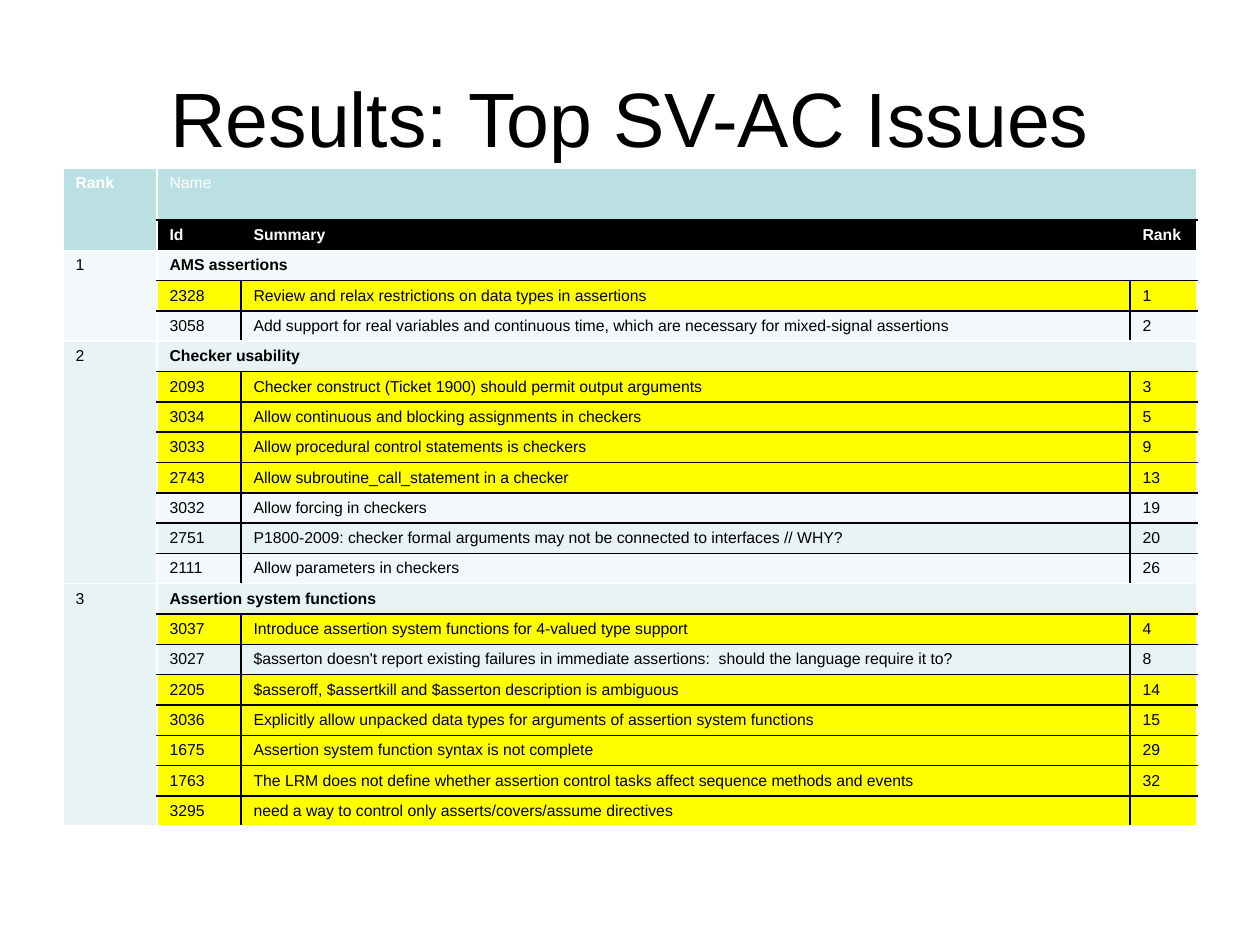
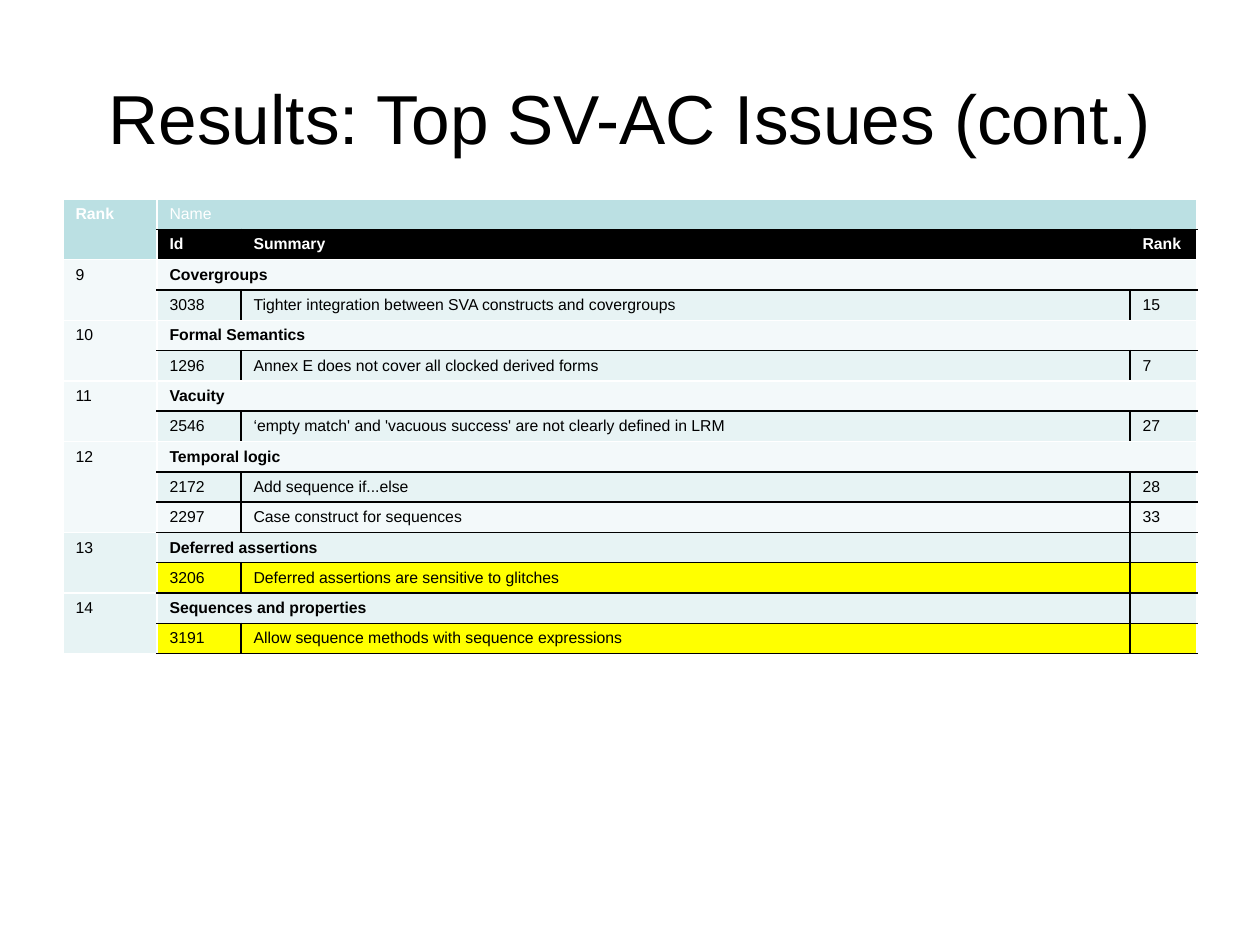
from dataclasses import dataclass

from lxml.etree import SubElement
from pptx import Presentation
from pptx.dml.color import RGBColor
from pptx.enum.text import MSO_ANCHOR, MSO_AUTO_SIZE, PP_ALIGN
from pptx.oxml.ns import qn
from pptx.util import Pt

HEAD = ("Rank", "Name", [("Id", "Summary", "Rank")])

SLIDES = [
    {
        "title": "Results: Top SV-AC Issues", "size": 44, "top": 168, "first": 52,
        "groups": [
            ("1", "AMS assertions", [
                ("2328", "Review and relax restrictions on data types in assertions", "1"),
                ("3058", "Add support for real variables and continuous time, which are necessary for mixed-signal assertions", "2"),
            ]),
            ("2", "Checker usability", [
                ("2093", "Checker construct (Ticket 1900) should permit output arguments", "3"),
                ("3034", "Allow continuous and blocking assignments in checkers", "5"),
                ("3033", "Allow procedural control statements is checkers", "9"),
                ("2743", "Allow subroutine_call_statement in a checker", "13"),
                ("3032", "Allow forcing in checkers", "19"),
                ("2751", "P1800-2009: checker formal arguments may not be connected to interfaces // WHY?", "20"),
                ("2111", "Allow parameters in checkers", "26"),
            ]),
            ("3", "Assertion system functions", [
                ("3037", "Introduce assertion system functions for 4-valued type support", "4"),
                ("3027", "$asserton doesn't report existing failures in immediate assertions:  should the language require it to?", "8"),
                ("2205", "$asseroff, $assertkill and $asserton description is ambiguous", "14"),
                ("3036", "Explicitly allow unpacked data types for arguments of assertion system functions", "15"),
                ("1675", "Assertion system function syntax is not complete", "29"),
                ("1763", "The LRM does not define whether assertion control tasks affect sequence methods and events", "32"),
                ("3295", "need a way to control only asserts/covers/assume directives", ""),
            ]),
        ],
    },
    {
        "title": "Results: Top SV-AC Issues (cont.)", "size": 39.6, "top": 199, "first": 30,
        "groups": [
            ("9", "Covergroups", [
                ("3038", "Tighter integration between SVA constructs and covergroups", "15"),
            ]),
            ("10", "Formal Semantics", [
                ("1296", "Annex E does not cover all clocked derived forms", "7"),
            ]),
            ("11", "Vacuity", [
                ("2546", "‘empty match' and 'vacuous success' are not clearly defined in LRM", "27"),
            ]),
            ("12", "Temporal logic", [
                ("2172", "Add sequence if...else", "28"),
                ("2297", "Case construct for sequences", "33"),
            ]),
            ("13", "Deferred assertions", [
                ("3206", "Deferred assertions are sensitive to glitches", ""),
            ]),
            ("14", "Sequences and properties", [
                ("3191", "Allow sequence methods with sequence expressions", ""),
            ]),
        ],
    },
]

HOT = {"2328", "2093", "3034", "3033", "2743", "3037", "2205", "3036",
       "1675", "1763", "3295", "3206", "3191"}
SPLIT = {"13", "14"}

LEFT, WIDTH, ROW = 63, 1134, 30
COLS = (94, 84, 889, 67)
TITLE = (LEFT, 38, WIDTH, 158)


@dataclass(frozen=True)
class Theme:
    font: str = "Arial"
    text: float = 9
    line: float = 1
    black: str = "000000"
    white: str = "FFFFFF"
    head: str = "BBE0E3"
    bands: tuple = ("F3F9FA", "E7F3F4")
    hot: str = "FFFF00"


LOOK = Theme()
B, W = LOOK.black, LOOK.white


def px(n):
    return round(n * 914400 / 126)


def style(par, size, color, bold=False):
    for run in par.runs:
        run.font.name = LOOK.font
        run.font.size = Pt(size)
        run.font.bold = bold
        run.font.color.rgb = RGBColor.from_string(color)


def edge(cell, colors):
    props = cell._tc.get_or_add_tcPr()
    for side, color in zip("LRTB", colors):
        line = SubElement(props, qn(f"a:ln{side}"), w=str(Pt(LOOK.line)))
        fill = SubElement(line, qn("a:solidFill"))
        SubElement(fill, qn("a:srgbClr"), val=color)


def paint(cell, text, fill, edges, color=B, bold=False):
    edge(cell, edges)
    cell.fill.solid()
    cell.fill.fore_color.rgb = RGBColor.from_string(fill)
    par = cell.text_frame.paragraphs[0]
    par.text = text
    style(par, LOOK.text, color, bold)
    if not text:
        mark = SubElement(par._p, qn("a:endParaRPr"), sz=str(Pt(LOOK.text).centipoints))
        SubElement(mark, qn("a:latin"), typeface=LOOK.font)


def block(grid, top, group, after):
    rank, name, items = group
    head, split = group is HEAD, rank in SPLIT
    ink = W if head else B
    band = LOOK.head if head else LOOK.bands[top % 2]
    last = top + len(items)
    end = B if split or after in SPLIT else W
    grid.cell(top, 0).merge(grid.cell(last, 0))
    grid.cell(top, 1).merge(grid.cell(top, 2 if split else 3))

    for row in range(top, last + 1):
        paint(grid.cell(row, 0), rank if row == top else "", band, (W, W, W, W), ink, head)

    lid = B if split else W
    for col, text in enumerate((name, "", ""), 1):
        left = B if split and col == 3 else W
        right = B if split and col < 3 else W
        paint(grid.cell(top, col), text, band, (left, right, lid, B), ink, not head)

    for row, item in enumerate(items, top + 1):
        fill = B if head else LOOK.hot if item[0] in HOT else LOOK.bands[row % 2]
        base = end if row == last else B
        for col, text in enumerate(item, 1):
            sides = (W if col == 1 else B, W if col == 3 else B, B, base)
            paint(grid.cell(row, col), text, fill, sides, ink, head)
    return last + 1


def table(slide, data):
    groups = [HEAD, *data["groups"]]
    count = sum(1 + len(items) for _, _, items in groups)
    tall = data["first"] + ROW * (count - 1)
    grid = slide.shapes.add_table(
        count, len(COLS), px(LEFT), px(data["top"]), px(WIDTH), px(tall)).table
    grid.first_row = grid.horz_banding = False
    for col, wide in zip(grid.columns, COLS):
        col.width = px(wide)
    for row in grid.rows:
        row.height = px(ROW)
    grid.rows[0].height = px(data["first"])
    ranks = [group[0] for group in groups[1:]] + [""]
    top = 0
    for group, after in zip(groups, ranks):
        top = block(grid, top, group, after)


def head(slide, data):
    box = slide.shapes.title
    box.left, box.top, box.width, box.height = map(px, TITLE)
    frame = box.text_frame
    frame.text = data["title"]
    frame.word_wrap = True
    frame.auto_size = MSO_AUTO_SIZE.NONE
    frame.vertical_anchor = MSO_ANCHOR.MIDDLE
    par = frame.paragraphs[0]
    par.alignment = PP_ALIGN.CENTER
    style(par, data["size"], B)


def main():
    deck = Presentation()
    deck.slide_width, deck.slide_height = px(1260), px(945)
    for data in SLIDES:
        slide = deck.slides.add_slide(deck.slide_layouts[5])
        head(slide, data)
        table(slide, data)
    deck.save("out.pptx")


if __name__ == "__main__":
    main()
